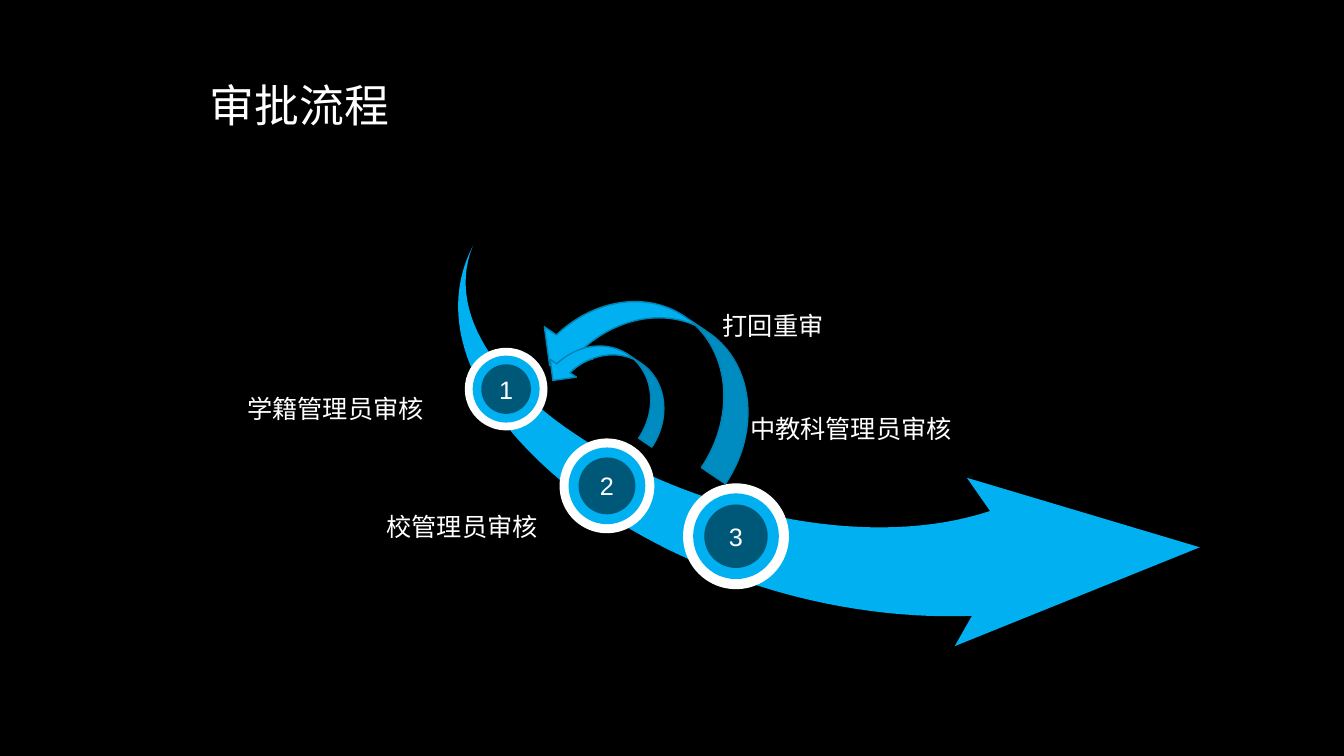
from dataclasses import dataclass
from typing import Any

import pptx
import pptx.dml.color
import pptx.enum.shapes
import pptx.enum.text
import pptx.util

Inches = pptx.util.Inches
Pt = pptx.util.Pt
Preset = pptx.enum.shapes.MSO_SHAPE
Align = pptx.enum.text.PP_ALIGN
Anchor = pptx.enum.text.MSO_ANCHOR
Point = tuple[float, float]

BLACK, WHITE = "000000", "FFFFFF"
SKY, STEEL, NAVY = "00B0F0", "0082B2", "005878"


@dataclass(frozen=True)
class Step:
    number: str
    x: float
    y: float
    diameter: float


@dataclass(frozen=True)
class Label:
    text: str
    left: float
    top: float
    width: float
    height: float
    align: Align
    wrap: bool = True


@dataclass(frozen=True)
class ReturnArrow:
    left: float
    top: float
    width: float
    height: float


STEPS = [
    Step("1", 5.02, 3.86, 0.82),
    Step("2", 6.02, 4.82, 0.94),
    Step("3", 7.3, 5.32, 1.05),
]
RINGS = [(1.0, WHITE), (0.81, SKY), (0.6, NAVY)]
STEP_LABELS = [
    Label("学籍管理员审核", 1.01, 3.57, 3.29, 0.97, Align.RIGHT),
    Label("校管理员审核", 2.14, 4.74, 3.29, 0.97, Align.RIGHT),
    Label("中教科管理员审核", 7.34, 3.77, 3.29, 0.97, Align.LEFT),
]
RETURN_LABEL = Label("打回重审", 7.07, 3.03, 1.2, 0.4, Align.LEFT, wrap=False)
RETURN_ARROWS = [
    ReturnArrow(5.95, 2.46, 1.15, 2.39),
    ReturnArrow(5.77, 3.13, 0.63, 1.34),
]


def apply(target: Any, formats: dict[str, Any]) -> None:
    for attribute, value in formats.items():
        setattr(target, attribute, value)


def paint(fill: Any, color: str) -> None:
    fill.solid()
    fill.fore_color.rgb = pptx.dml.color.RGBColor.from_string(color)


def style_shape(shape: Any, fill: str, outline: str | None = None) -> None:
    shape.shadow.inherit = False
    paint(shape.fill, fill)
    if outline:
        paint(shape.line.fill, outline)
        shape.line.width = Pt(1)
    else:
        shape.line.fill.background()


def write(shape: Any, text: str, size: int, frame: dict[str, Any],
          paragraph: dict[str, Any]) -> None:
    apply(shape.text_frame, frame)
    line = shape.text_frame.paragraphs[0]
    apply(line, paragraph)
    run = line.add_run()
    run.text = text
    apply(run.font, {"name": "Arial", "size": Pt(size)})
    paint(run.font.fill, WHITE)


def curve(start: Point, pull: Point, push: Point, end: Point) -> list[Point]:
    steps = 60
    points = []
    for index in range(1, steps + 1):
        t = index / steps
        weights = ((1 - t) ** 3, 3 * t * (1 - t) ** 2, 3 * t ** 2 * (1 - t), t ** 3)
        x, y = (sum(w * v for w, v in zip(weights, axis))
                for axis in zip(start, pull, push, end))
        points.append((x, y))
    return points


def draw_swoosh(slide: Any) -> None:
    tail = (4.69, 2.44)
    upper_neck, lower_neck = (9.82, 5.07), (9.64, 6.11)
    head = [(9.59, 4.74), (11.9, 5.43), (9.47, 6.41), lower_neck]
    outline = ([tail] + curve(tail, (4.07, 3.97), (7.64, 5.79), upper_neck) + head
               + curve(lower_neck, (6.71, 6.22), (3.86, 4.05), tail))
    start, *rest = [(Inches(x), Inches(y)) for x, y in outline]
    builder = slide.shapes.build_freeform(*start)
    builder.add_line_segments(rest, close=True)
    style_shape(builder.convert_to_shape(), SKY)


def draw_step(slide: Any, step: Step) -> None:
    for ratio, color in RINGS:
        size = step.diameter * ratio
        disc = slide.shapes.add_shape(
            Preset.OVAL, Inches(step.x - size / 2), Inches(step.y - size / 2),
            Inches(size), Inches(size))
        style_shape(disc, color)
    margins = dict.fromkeys(
        ("margin_left", "margin_right", "margin_top", "margin_bottom"), 0)
    write(disc, step.number, 18, {"vertical_anchor": Anchor.MIDDLE, **margins},
          {"alignment": Align.CENTER})


def draw_label(slide: Any, label: Label) -> None:
    box = slide.shapes.add_textbox(Inches(label.left), Inches(label.top),
                                   Inches(label.width), Inches(label.height))
    write(box, label.text, 18,
          {"word_wrap": label.wrap, "vertical_anchor": Anchor.MIDDLE},
          {"alignment": label.align})


def draw_return_arrow(slide: Any, arrow: ReturnArrow) -> None:
    shape = slide.shapes.add_shape(
        Preset.CURVED_RIGHT_ARROW, Inches(arrow.left), Inches(arrow.top),
        Inches(arrow.width), Inches(arrow.height))
    shape.rotation = 124
    style_shape(shape, SKY, STEEL)


def main() -> None:
    deck = pptx.Presentation()
    apply(deck, {"slide_width": Inches(13.33), "slide_height": Inches(7.5)})
    slide = deck.slides.add_slide(deck.slide_layouts[5])
    paint(slide.background.fill, BLACK)

    heading = slide.shapes.title
    apply(heading, {"left": Inches(1.98), "top": Inches(0.35),
                    "width": Inches(5.69), "height": Inches(1.45)})
    write(heading, "审批流程", 32,
          {"word_wrap": True, "vertical_anchor": Anchor.MIDDLE},
          {"alignment": Align.LEFT, "line_spacing": 0.9})

    draw_swoosh(slide)
    for step in STEPS:
        draw_step(slide, step)
    for label in STEP_LABELS:
        draw_label(slide, label)
    for arrow in RETURN_ARROWS:
        draw_return_arrow(slide, arrow)
    draw_label(slide, RETURN_LABEL)
    deck.save("out.pptx")


if __name__ == "__main__":
    main()
